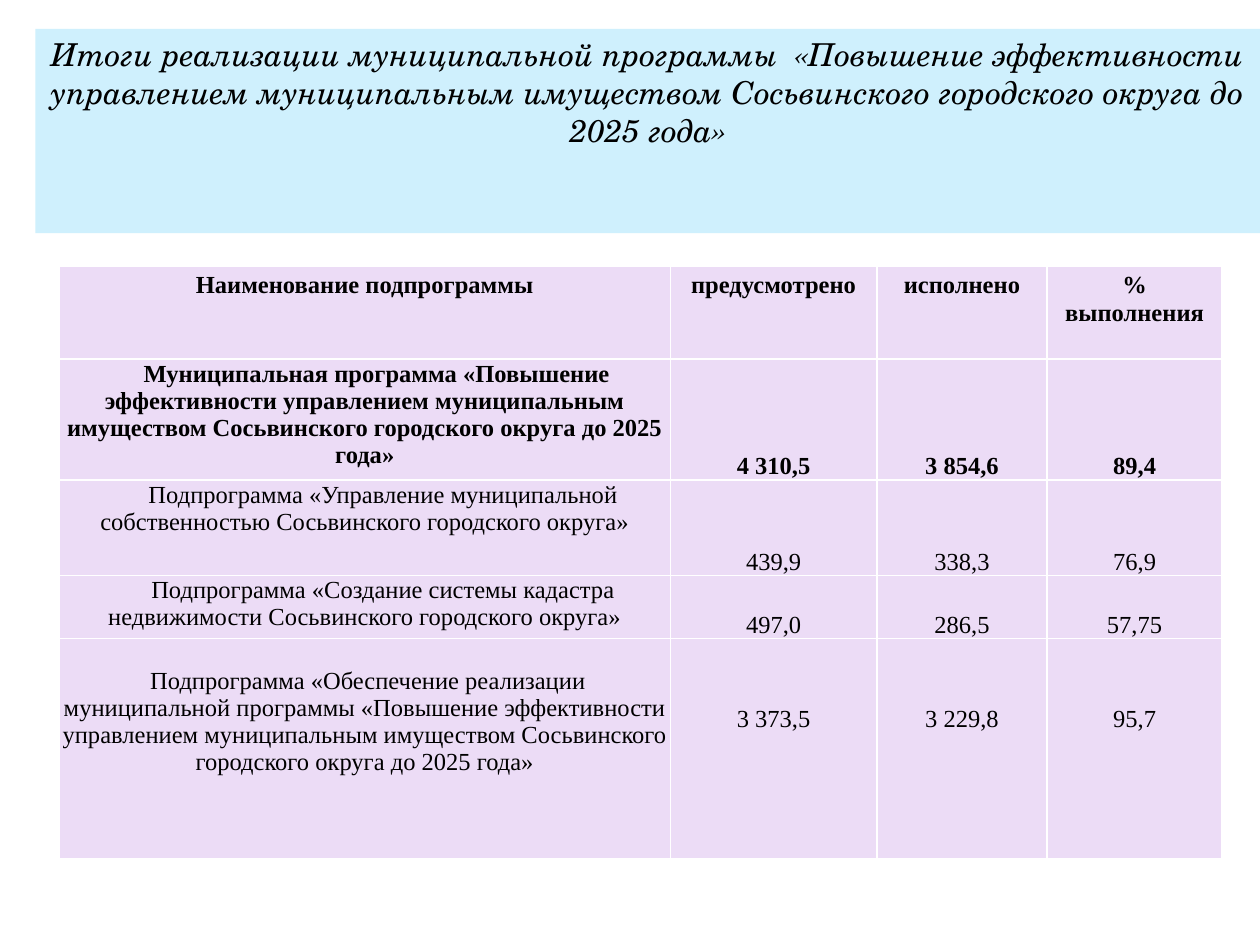
from pptx import Presentation
from pptx.dml.color import RGBColor
from pptx.enum.text import MSO_ANCHOR, MSO_AUTO_SIZE, PP_ALIGN
from pptx.util import Inches, Pt

BLACK = RGBColor(0x00, 0x00, 0x00)
SKY = RGBColor(0xCF, 0xF0, 0xFD)
LILAC = RGBColor(0xEC, 0xDC, 0xF6)

TITLE_FONT = "TeX Gyre Schola"
TABLE_FONT = "Times New Roman"

TITLE = ("Итоги реализации муниципальной программы  «Повышение эффективности "
         "управлением муниципальным имуществом Сосьвинского городского округа до 2025 года»")
HEADERS = ["Наименование подпрограммы", "предусмотрено", "исполнено", "% выполнения"]

# Name, first-line indent, top margin of the name, bottom margin of the values, values
PROGRAMMES = [
    ("Муниципальная программа «Повышение эффективности управлением муниципальным "
     "имуществом Сосьвинского городского округа до 2025 года»",
     0.19, 0.01, 0, ["4 310,5", "3 854,6", "89,4"]),
    ("Подпрограмма «Управление муниципальной собственностью Сосьвинского городского округа»",
     0.29, 0.01, 0, ["439,9", "338,3", "76,9"]),
    ("Подпрограмма «Создание системы кадастра недвижимости Сосьвинского городского округа»",
     0.29, 0.01, 0, ["497,0", "286,5", "57,75"]),
    ("Подпрограмма «Обеспечение реализации муниципальной программы «Повышение "
     "эффективности управлением муниципальным имуществом Сосьвинского городского "
     "округа до 2025 года»",
     0.05, 0.23, 1, ["3 373,5", "3 229,8", "95,7"]),
]
COLUMN_WIDTHS = [4.85, 1.64, 1.35, 1.39]
ROW_HEIGHTS = [0.74, 0.96, 0.76, 0.5, 1.75]


def write_text(frame, text, font, size, bold=False, italic=False):
    """Write one centred paragraph and return it."""
    paragraph = frame.paragraphs[0]
    paragraph.alignment = PP_ALIGN.CENTER
    span = paragraph.add_run()
    span.text = text
    span.font.name = font
    span.font.size = Pt(size)
    span.font.bold = bold
    span.font.italic = italic
    span.font.color.rgb = BLACK
    return paragraph


def fill_cell(cell, text, bold, margins=(0.1, 0.05, 0.1, 0.05), anchor=MSO_ANCHOR.TOP):
    """Fill a table cell; margins run left, top, right, bottom."""
    cell.fill.solid()
    cell.fill.fore_color.rgb = LILAC
    cell.vertical_anchor = anchor
    (cell.margin_left, cell.margin_top,
     cell.margin_right, cell.margin_bottom) = map(Inches, margins)
    return write_text(cell.text_frame, text, TABLE_FONT, 14, bold)


def add_title(page):
    box = page.shapes.title
    box.left, box.top = Inches(0.28), Inches(0.23)
    box.width, box.height = Inches(9.72), Inches(1.62)
    box.fill.solid()
    box.fill.fore_color.rgb = SKY
    frame = box.text_frame
    frame.word_wrap = True
    frame.auto_size = MSO_AUTO_SIZE.NONE
    frame.vertical_anchor = MSO_ANCHOR.TOP
    write_text(frame, TITLE, TITLE_FONT, 18, italic=True)


def add_results_table(page):
    table = page.shapes.add_table(
        len(ROW_HEIGHTS), len(COLUMN_WIDTHS), Inches(0.47), Inches(2.11),
        Inches(sum(COLUMN_WIDTHS)), Inches(sum(ROW_HEIGHTS))).table
    table.horz_banding = False
    for column, width in zip(table.columns, COLUMN_WIDTHS):
        column.width = Inches(width)
    for row, height in zip(table.rows, ROW_HEIGHTS):
        row.height = Inches(height)

    # Header row
    for column, header in enumerate(HEADERS):
        fill_cell(table.cell(0, column), header, bold=True)

    # Programme rows: the first one is the bold total
    for row, (name, indent, top, bottom, values) in enumerate(PROGRAMMES, start=1):
        bold = row == 1
        paragraph = fill_cell(table.cell(row, 0), name, bold, (0.01, top, 0.01, 0))
        paragraph._p.get_or_add_pPr().set("indent", str(Inches(indent)))
        for column, value in enumerate(values, start=1):
            paragraph = fill_cell(table.cell(row, column), value, bold,
                                  (0.07, 0, 0.07, bottom), MSO_ANCHOR.BOTTOM)
            paragraph.line_spacing = 1.15


def main():
    deck = Presentation()
    deck.slide_width, deck.slide_height = Inches(10), Inches(7.5)
    page = deck.slides.add_slide(deck.slide_layouts.get_by_name("Title Only"))
    add_title(page)
    add_results_table(page)
    deck.save("out.pptx")


if __name__ == "__main__":
    main()
